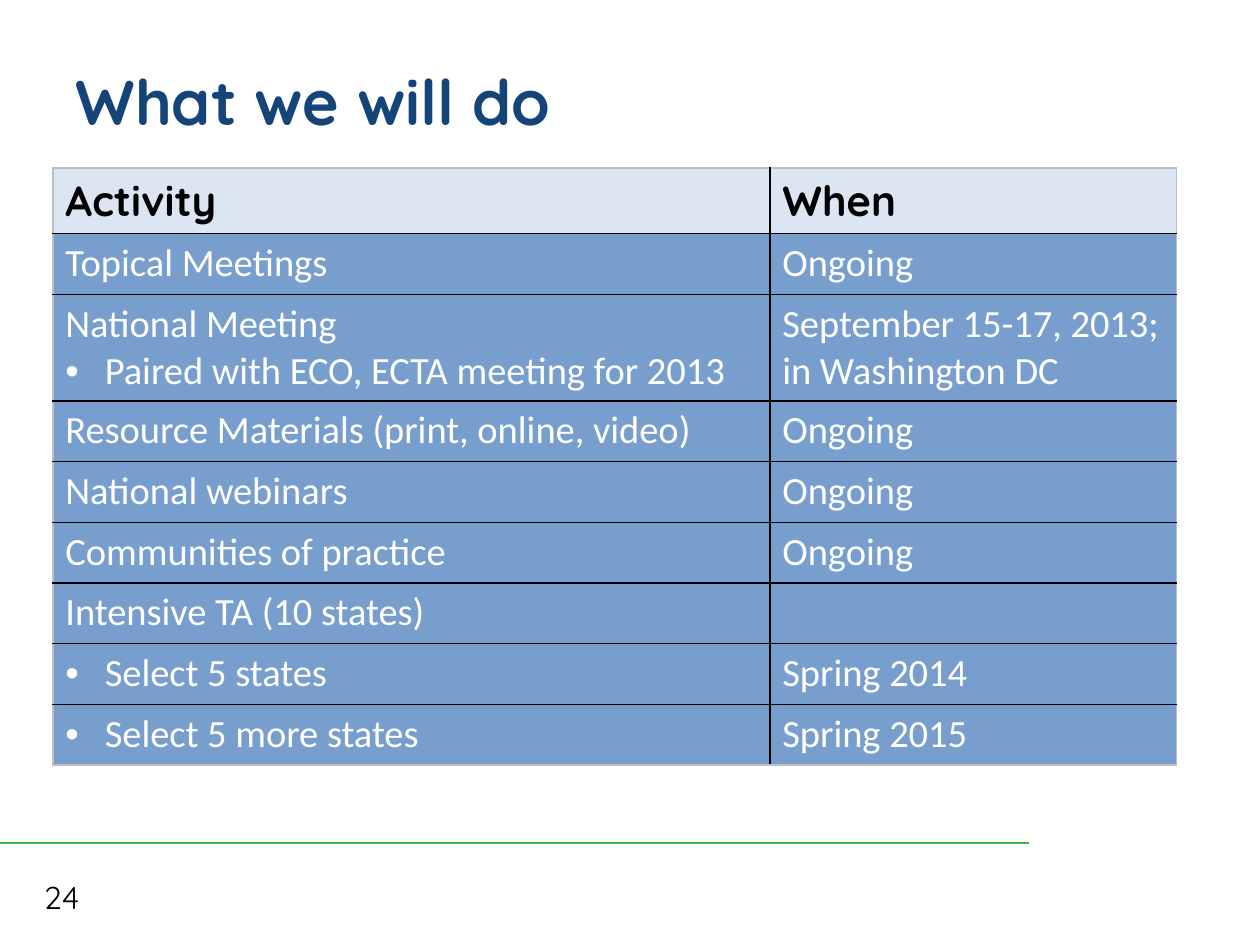
from lxml import etree
from pptx import Presentation
from pptx import util as u
from pptx.dml.color import RGBColor
from pptx.enum import shapes, text
from pptx.oxml import ns

COLORS = {
    "title": "154578", "text": "000000", "body_text": "FFFFFF",
    "header": "DCE6F2", "body": "779ECD",
    "grid": "000000", "frame": "BFBFBF", "rule": "39B54A",
}
BULLET = "• "
ROWS = [
    ("Activity", "When"),
    ("Topical Meetings", "Ongoing"),
    ("National Meeting\n• Paired with ECO, ECTA meeting for 2013",
     "September 15-17, 2013; in Washington DC"),
    ("Resource Materials (print, online, video)", "Ongoing"),
    ("National webinars", "Ongoing"),
    ("Communities of practice", "Ongoing"),
    ("Intensive TA (10 states)", ""),
    ("• Select 5 states", "Spring 2014"),
    ("• Select 5 more states", "Spring 2015"),
]
COLUMN_WIDTHS = (409.7, 232.5)
HEADER_HEIGHT, ROW_HEIGHT, TALL_HEIGHT = 37.5, 34.7, 60.9


def rgb(name):
    """Return the named colour."""
    return RGBColor.from_string(COLORS[name])


def add_run(p, words, size, font, color, bold=False):
    """Add one formatted run to a paragraph."""
    r = p.add_run()
    r.text = words
    r.font.size = u.Pt(size)
    r.font.name = font
    r.font.bold = bold
    r.font.color.rgb = rgb(color)


def set_bullet(p):
    """Give a paragraph a hanging bullet."""
    pPr = p._p.get_or_add_pPr()
    pPr.set("marL", str(u.Pt(22.5)))
    pPr.set("indent", str(u.Pt(-22.5)))
    etree.SubElement(pPr, ns.qn("a:buFont")).set("typeface", "Arial")
    etree.SubElement(pPr, ns.qn("a:buChar")).set("char", BULLET.strip())


def set_borders(cell, edges):
    """Draw the four cell edges, given as tag and colour name."""
    tcPr = cell._tc.get_or_add_tcPr()
    for i, (tag, color) in enumerate(edges.items()):
        ln = etree.Element(ns.qn(f"a:{tag}"), w=str(u.Pt(1)))
        fill = etree.SubElement(ln, ns.qn("a:solidFill"))
        etree.SubElement(fill, ns.qn("a:srgbClr")).set("val", COLORS[color])
        tcPr.insert(i, ln)


def fill_cell(cell, words, header):
    """Fill a cell with colour and its lines of text."""
    cell.fill.solid()
    cell.fill.fore_color.rgb = rgb("header" if header else "body")
    style = (24, "Quicksand", "text", True) if header else (22, "Calibri", "body_text")
    tf = cell.text_frame
    for i, line in enumerate(words.splitlines()):
        p = tf.add_paragraph() if i else tf.paragraphs[0]
        if line.startswith(BULLET):
            set_bullet(p)
        add_run(p, line.removeprefix(BULLET), *style)


def add_title(s, words):
    """Place and format the title placeholder."""
    sp = s.shapes.title
    sp.left, sp.top, sp.width, sp.height = map(u.Pt, (36, 12.2, 648, 90))
    tf = sp.text_frame
    tf.vertical_anchor = text.MSO_ANCHOR.MIDDLE
    p = tf.paragraphs[0]
    p.alignment = text.PP_ALIGN.LEFT
    add_run(p, words, 36, "Quicksand", "title", True)


def add_rule(s):
    """Draw the green footer line."""
    y = u.Pt(481.8)
    line = s.shapes.add_connector(shapes.MSO_CONNECTOR.STRAIGHT, 0, y, u.Pt(588), y)
    line.line.color.rgb = rgb("rule")
    line.line.width = u.Pt(1.5)
    etree.SubElement(line._element.spPr, ns.qn("a:effectLst"))


def add_page_number(s, number):
    """Write the page number below the footer line."""
    tf = s.shapes.add_textbox(*map(u.Pt, (18, 498.2, 168, 29))).text_frame
    tf.word_wrap = True
    add_run(tf.paragraphs[0], number, 18, "Quicksand", "text")


def add_schedule(s):
    """Build the table of activities and dates."""
    heights = [HEADER_HEIGHT] + [
        TALL_HEIGHT if "\n" in row[0] else ROW_HEIGHT for row in ROWS[1:]]
    last_row, last_col = len(ROWS) - 1, len(COLUMN_WIDTHS) - 1
    table = s.shapes.add_table(
        len(ROWS), len(COLUMN_WIDTHS), u.Pt(30.2), u.Pt(96),
        u.Pt(sum(COLUMN_WIDTHS)), u.Pt(sum(heights))).table
    for column, width in zip(table.columns, COLUMN_WIDTHS):
        column.width = u.Pt(width)
    for i, (row, height) in enumerate(zip(ROWS, heights)):
        table.rows[i].height = u.Pt(height)
        for j, words in enumerate(row):
            cell = table.cell(i, j)
            fill_cell(cell, words, header=i == 0)
            outer = {"lnL": j == 0, "lnR": j == last_col,
                     "lnT": i == 0, "lnB": i == last_row}
            set_borders(cell, {tag: "frame" if out else "grid"
                               for tag, out in outer.items()})


def main():
    """Build and save the slide."""
    prs = Presentation()
    prs.slide_width, prs.slide_height = u.Pt(720), u.Pt(540)
    s = prs.slides.add_slide(prs.slide_layouts[5])
    add_rule(s)
    add_title(s, "What we will do")
    add_page_number(s, "24")
    add_schedule(s)
    prs.save("out.pptx")


if __name__ == "__main__":
    main()
